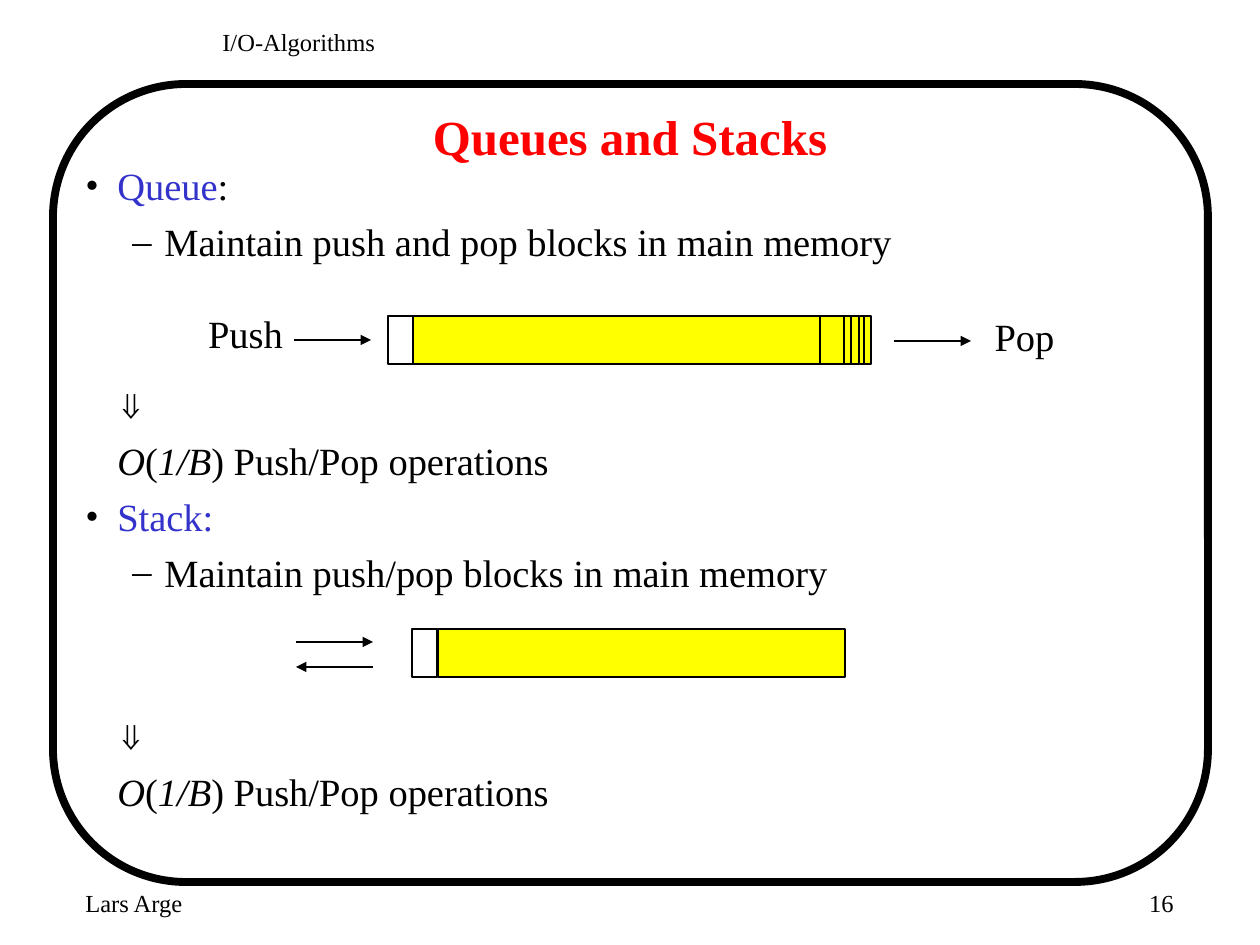
from dataclasses import dataclass

from lxml.etree import SubElement
from pptx import Presentation
from pptx.dml.color import RGBColor
from pptx.enum.shapes import MSO_CONNECTOR, MSO_SHAPE
from pptx.enum.text import MSO_ANCHOR, PP_ALIGN
from pptx.oxml.ns import qn
from pptx.util import Emu, Pt

EMU_PER_PX = 914400 / 126
FONT = "Times New Roman"
COLORS = {"ink": "000000", "title": "FF0000", "term": "3333CC",
          "block": "FFFF00", "memory": "FFFFFF"}
CELL_HEIGHT = 48
ARROW_LENGTH = 77
LINE_GAP = 5.5    # points between body lines
FIGURE_GAP = 67   # points left free for a drawing


@dataclass(frozen=True)
class Cell:
    left: int
    top: int
    width: int
    fill: str
    weight: float = 1.38


@dataclass(frozen=True)
class Arrow:
    left: int
    top: int
    end: str = "tailEnd"


@dataclass(frozen=True)
class Label:
    text: str
    box: tuple[int, int, int, int]
    size: int
    align: PP_ALIGN = PP_ALIGN.LEFT
    color: str = "ink"
    bold: bool = False
    wrap: bool = True
    anchor: MSO_ANCHOR = MSO_ANCHOR.TOP


@dataclass(frozen=True)
class Line:
    runs: tuple[tuple[str, dict], ...]
    bullet: str = ""
    margin: int = 32
    indent: int = 0
    before: float = LINE_GAP


def px(length: int) -> Emu:
    return Emu(round(length * EMU_PER_PX))


def rgb(name: str) -> RGBColor:
    return RGBColor.from_string(COLORS[name])


def set_all(target, values: dict) -> None:
    for name, value in values.items():
        setattr(target, name, value)


def add_run(paragraph, text: str, color: str = "ink", **font_values) -> None:
    run = paragraph.add_run()
    run.text = text
    set_all(run.font, {"name": FONT, **font_values})
    run.font.color.rgb = rgb(color)


def outline(shape, weight: float) -> None:
    shape.line.color.rgb = rgb("ink")
    shape.line.width = Pt(weight)


def add_cell(slide, cell: Cell) -> None:
    shape = slide.shapes.add_shape(MSO_SHAPE.RECTANGLE, px(cell.left), px(cell.top),
                                   px(cell.width), px(CELL_HEIGHT))
    shape.shadow.inherit = False
    shape.fill.solid()
    shape.fill.fore_color.rgb = rgb(cell.fill)
    outline(shape, cell.weight)


def add_arrow(slide, arrow: Arrow) -> None:
    connector = slide.shapes.add_connector(
        MSO_CONNECTOR.STRAIGHT, px(arrow.left), px(arrow.top),
        px(arrow.left + ARROW_LENGTH), px(arrow.top))
    outline(connector, 1.38)
    properties = connector._element.spPr
    SubElement(properties.find(qn("a:ln")), qn(f"a:{arrow.end}"), type="triangle")
    SubElement(properties, qn("a:effectLst"))


def add_label(slide, label: Label) -> None:
    frame = slide.shapes.add_textbox(*map(px, label.box)).text_frame
    set_all(frame, {"word_wrap": label.wrap, "vertical_anchor": label.anchor})
    paragraph = frame.paragraphs[0]
    paragraph.alignment = label.align
    add_run(paragraph, label.text, label.color, size=Pt(label.size), bold=label.bold)


def add_body(slide, box: tuple[int, int, int, int], lines: list[Line]) -> None:
    frame = slide.shapes.add_textbox(*map(px, box)).text_frame
    frame.word_wrap = True
    for number, line in enumerate(lines):
        paragraph = frame.add_paragraph() if number else frame.paragraphs[0]
        paragraph.space_before = Pt(line.before if number else 0)
        properties = paragraph._p.get_or_add_pPr()
        properties.set("marL", str(px(line.margin)))
        properties.set("indent", str(px(line.indent)))
        if line.bullet:
            color = SubElement(properties, qn("a:buClr"))
            SubElement(color, qn("a:srgbClr"), val=COLORS["ink"])
            SubElement(properties, qn("a:buFont"), typeface=FONT)
            SubElement(properties, qn("a:buChar"), char=line.bullet)
        for text, values in line.runs:
            add_run(paragraph, text, **{"size": Pt(22), **values})


def topic(runs: tuple[tuple[str, dict], ...], detail: str) -> list[Line]:
    """A structure, how it is kept in memory, and what its operations cost."""
    italic = {"italic": True}
    cost = (("O", italic), ("(", {}), ("1/B", italic), (") Push/Pop operations", {}))
    return [
        Line(runs, "•", indent=-32),
        Line(((detail, {}),), "–", margin=79, indent=-32),
        Line((("⇓", {}),), before=FIGURE_GAP),
        Line(cost),
    ]


LABELS = [
    Label("Lars Arge", (73, 882, 262, 63), 14),
    Label("I/O-Algorithms", (210, 21, 829, 53), 14),
    Label("16", (924, 882, 262, 63), 14, PP_ALIGN.RIGHT),
    Label("Queues and Stacks", (94, 94, 1072, 84), 28, PP_ALIGN.CENTER, "title",
          bold=True, anchor=MSO_ANCHOR.MIDDLE),
    Label("Push", (195, 304, 101, 59), 22, PP_ALIGN.CENTER, wrap=False),
    Label("Pop", (982, 307, 85, 59), 22, PP_ALIGN.CENTER, wrap=False),
]

TERM = {"color": "term"}
BODY = (topic((("Queue", TERM), (":", {})), "Maintain push and pop blocks in main memory")
        + topic((("Stack:", TERM),), "Maintain push/pop blocks in main memory"))

QUEUE_TOP, STACK_TOP = 316, 629
POP_BLOCK_WIDTHS = (27, 20, 15, 7)  # nested, widest at the back
CELLS = [
    *(Cell(844, QUEUE_TOP, width, "block") for width in POP_BLOCK_WIDTHS),
    Cell(820, QUEUE_TOP, 24, "block"),
    Cell(388, QUEUE_TOP, 25, "memory"),
    Cell(413, QUEUE_TOP, 407, "block", 1.13),
    Cell(438, STACK_TOP, 407, "block", 1.13),
    Cell(412, STACK_TOP, 25, "memory"),
]

ARROWS = [
    Arrow(294, 340),
    Arrow(894, 341),
    Arrow(296, 642),
    Arrow(296, 667, "headEnd"),
]


def main() -> None:
    deck = Presentation()
    set_all(deck, {"slide_width": px(1260), "slide_height": px(945)})
    slide = deck.slides.add_slide(deck.slide_layouts[6])

    # Rounded frame
    frame = slide.shapes.add_shape(MSO_SHAPE.FLOWCHART_ALTERNATE_PROCESS,
                                   px(53), px(84), px(1155), px(798))
    frame.shadow.inherit = False
    frame.fill.background()
    outline(frame, 4.5)

    # Text
    add_body(slide, (73, 156, 1113, 735), BODY)
    for label in LABELS:
        add_label(slide, label)

    # Queue and stack drawings
    for cell in CELLS:
        add_cell(slide, cell)
    for arrow in ARROWS:
        add_arrow(slide, arrow)

    deck.save("out.pptx")


if __name__ == "__main__":
    main()
